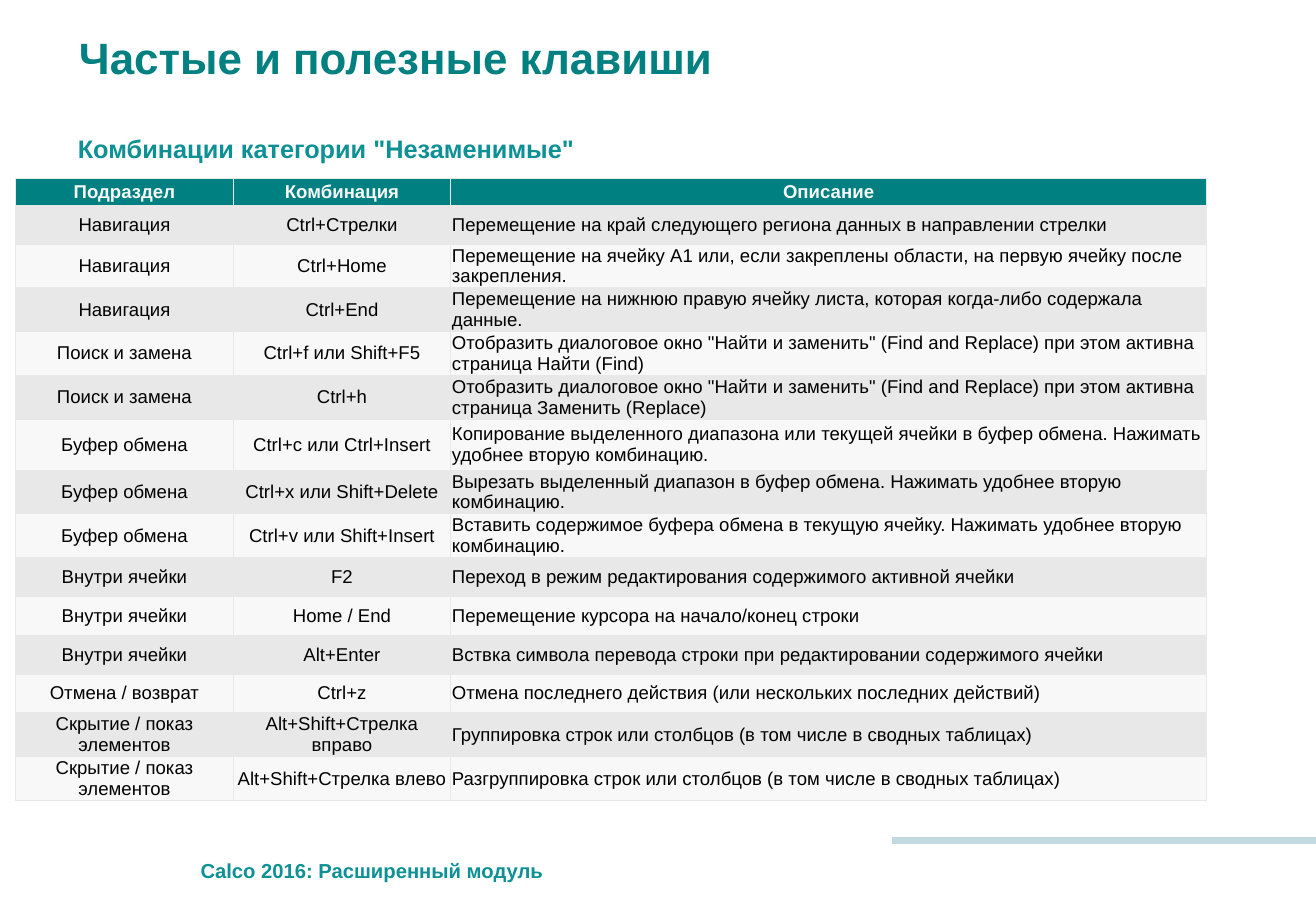
from lxml.etree import SubElement
from pptx import Presentation
from pptx.dml.color import RGBColor
from pptx.enum.shapes import MSO_CONNECTOR
from pptx.enum.text import MSO_ANCHOR, MSO_AUTO_SIZE, PP_ALIGN
from pptx.oxml import parse_xml
from pptx.oxml.ns import nsdecls, qn
from pptx.util import Inches, Pt

TEAL = RGBColor(0x00, 0x80, 0x80)
AQUA = RGBColor(0x0D, 0x91, 0x95)
MIST = RGBColor(0xC0, 0xDA, 0xDE)
GREY = RGBColor(0xE8, 0xE8, 0xE8)
PALE = RGBColor(0xF8, 0xF8, 0xF8)
BLACK = RGBColor(0, 0, 0)

WIDE, HIGH = 10.83, 7.5
COLS = (1.79, 1.79, 6.22)
HEAD_ROW, BASE_ROW, TALL_ROW = 0.22, 0.32, 0.42
TALL = 6  # the row that is set higher than the rest

HEADS = ("Подраздел", "Комбинация", "Описание")
GROUPS = (
    ("Навигация", (
        ("Ctrl+Стрелки", "Перемещение на край следующего региона данных в направлении стрелки"),
        ("Ctrl+Home", "Перемещение на ячейку A1 или, если закреплены области, "
                      "на первую ячейку после закрепления."),
        ("Ctrl+End", "Перемещение на нижнюю правую ячейку листа, которая когда-либо "
                     "содержала данные."))),
    ("Поиск и замена", (
        ("Ctrl+f или Shift+F5", "Отобразить диалоговое окно \"Найти и заменить\" (Find and Replace) "
                                "при этом активна страница Найти (Find)"),
        ("Ctrl+h", "Отобразить диалоговое окно \"Найти и заменить\" (Find and Replace) "
                   "при этом активна страница Заменить (Replace)"))),
    ("Буфер обмена", (
        ("Ctrl+c или Ctrl+Insert", "Копирование выделенного диапазона или текущей ячейки в буфер "
                                   "обмена. Нажимать удобнее вторую комбинацию."),
        ("Ctrl+x или Shift+Delete", "Вырезать выделенный диапазон в буфер обмена. "
                                    "Нажимать удобнее вторую комбинацию."),
        ("Ctrl+v или Shift+Insert", "Вставить содержимое буфера обмена в текущую ячейку. "
                                    "Нажимать удобнее вторую комбинацию."))),
    ("Внутри ячейки", (
        ("F2", "Переход в режим редактирования содержимого активной ячейки"),
        ("Home / End", "Перемещение курсора на начало/конец строки"),
        ("Alt+Enter", "Вствка символа перевода строки при редактировании содержимого ячейки"))),
    ("Отмена / возврат", (
        ("Ctrl+z", "Отмена последнего действия (или нескольких последних действий)"),)),
    ("Скрытие / показ элементов", (
        ("Alt+Shift+Стрелка вправо", "Группировка строк или столбцов (в том числе в сводных таблицах)"),
        ("Alt+Shift+Стрелка влево", "Разгруппировка строк или столбцов (в том числе в сводных таблицах)"))),
)


def write(frame, text, size=11, color=BLACK, bold=False, align=PP_ALIGN.LEFT):
    para = frame.paragraphs[0]
    para.text = text
    props = para._p.get_or_add_pPr()
    props.set("marL", "0")
    props.set("indent", "0")
    SubElement(props, qn("a:buNone"))
    para.alignment = align
    para.space_before = Pt(0)
    font = para.runs[0].font
    font.name, font.size, font.bold = "Arial", Pt(size), bold
    font.color.rgb = color


def heading(shape, box, text, size, color):
    shape.left, shape.top, shape.width, shape.height = map(Inches, box)
    frame = shape.text_frame
    frame.word_wrap = True
    frame.auto_size = MSO_AUTO_SIZE.NONE
    frame.vertical_anchor = MSO_ANCHOR.TOP
    frame.margin_left = frame.margin_bottom = 0
    frame.margin_right = Inches(0.1)
    frame.margin_top = Pt(0.14 * size)
    write(frame, text, size=size, color=color, bold=True)


def edge(cell):
    """Draw a thin grey border on all four sides of a cell."""
    props = cell._tc.get_or_add_tcPr()
    for side in "LRTB":
        props.append(parse_xml(
            f'<a:ln{side} {nsdecls("a")} w="{Pt(0.75)}"><a:solidFill>'
            f'<a:srgbClr val="{GREY}"/></a:solidFill></a:ln{side}>'))


def key_table(slide, left, top):
    rows = [HEADS] + [(name, *keys) for name, group in GROUPS for keys in group]
    sizes = [BASE_ROW] * len(rows)
    sizes[0], sizes[TALL] = HEAD_ROW, TALL_ROW
    table = slide.shapes.add_table(
        len(rows), len(COLS), Inches(left), Inches(top),
        Inches(sum(COLS)), Inches(sum(sizes))).table
    for col, width in zip(table.columns, COLS):
        col.width = Inches(width)
    for r, texts in enumerate(rows):
        table.rows[r].height = Inches(sizes[r])
        head = r == 0
        for c, text in enumerate(texts):
            cell = table.cell(r, c)
            edge(cell)
            cell.fill.solid()
            cell.fill.fore_color.rgb = TEAL if head else GREY if r % 2 else PALE
            cell.vertical_anchor = MSO_ANCHOR.MIDDLE
            cell.margin_left = cell.margin_right = Inches(0.01)
            cell.margin_top = cell.margin_bottom = Inches(0.01)
            write(cell.text_frame, text, color=PALE if head else BLACK, bold=head,
                  align=PP_ALIGN.CENTER if head or c < 2 else PP_ALIGN.LEFT)


def foot_line(slide, left, top):
    line = slide.shapes.add_connector(
        MSO_CONNECTOR.STRAIGHT, Inches(left), Inches(top), Inches(WIDE), Inches(top))
    line.line.color.rgb = MIST
    line.line.width = Pt(3.75)
    SubElement(line._element.spPr, qn("a:effectLst"))


def main():
    deck = Presentation()
    deck.slide_width, deck.slide_height = Inches(WIDE), Inches(HIGH)
    slide = deck.slides.add_slide(deck.slide_layouts.get_by_name("Two Content"))
    title, topic, course = list(slide.placeholders)[:3]
    foot_line(slide, 7.34, 6.92)
    heading(topic, (0.64, 1.07, 9.55, 0.39), "Комбинации категории \"Незаменимые\"", 15, AQUA)
    heading(course, (1.65, 7.04, 6.49, 0.34), "Calco 2016: Расширенный модуль", 12, AQUA)
    heading(title, (0.65, 0.2, 9.55, 0.54), "Частые и полезные клавиши", 26, TEAL)
    key_table(slide, 0.13, 1.47)
    deck.save("out.pptx")


if __name__ == "__main__":
    main()
